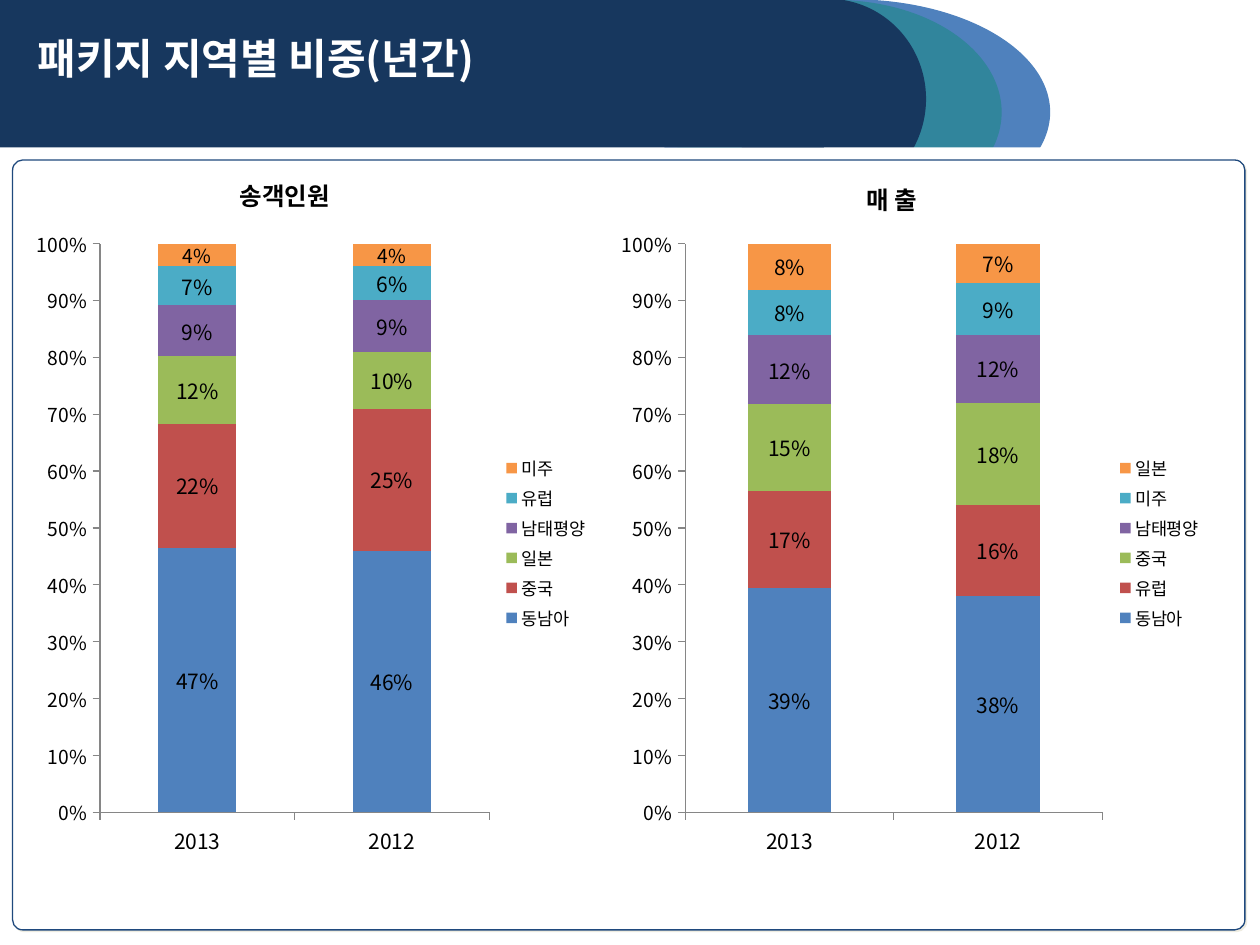
from lxml import etree
from pptx import Presentation
from pptx.chart.data import CategoryChartData
from pptx.dml.color import RGBColor
from pptx.enum.chart import XL_CHART_TYPE, XL_LEGEND_POSITION, XL_TICK_MARK
from pptx.enum.shapes import MSO_SHAPE
from pptx.enum.text import MSO_ANCHOR, PP_ALIGN
from pptx.oxml import parse_xml
from pptx.oxml.ns import nsdecls, qn
from pptx.util import Inches, Pt

ELLIPSE, RECTANGLE, ROUNDED = MSO_SHAPE.OVAL, MSO_SHAPE.RECTANGLE, MSO_SHAPE.ROUNDED_RECTANGLE
LEFT, CENTER = PP_ALIGN.LEFT, PP_ALIGN.CENTER
MIDDLE = MSO_ANCHOR.MIDDLE
STACKED_100 = XL_CHART_TYPE.COLUMN_STACKED_100
LEGEND_RIGHT = XL_LEGEND_POSITION.RIGHT
TICK_OUTSIDE = XL_TICK_MARK.OUTSIDE

BLACK = RGBColor(0x00, 0x00, 0x00)
WHITE = RGBColor(0xFF, 0xFF, 0xFF)
NAVY = RGBColor(0x17, 0x37, 0x5E)
TEAL = RGBColor(0x31, 0x85, 0x9C)
BLUE = RGBColor(0x4F, 0x81, 0xBD)
FRAME_BLUE = RGBColor(0x1F, 0x49, 0x7D)
AXIS_GRAY = RGBColor(0x86, 0x86, 0x86)
SERIES_COLORS = (
    BLUE,
    RGBColor(0xC0, 0x50, 0x4D),
    RGBColor(0x9B, 0xBB, 0x59),
    RGBColor(0x80, 0x64, 0xA2),
    RGBColor(0x4B, 0xAC, 0xC6),
    RGBColor(0xF7, 0x96, 0x46),
)
KOREAN_FONT = "Noto Sans CJK KR"
YEARS = ("2013", "2012")
FRAME_SHADOW = (
    f'<a:outerShdw {nsdecls("a")} dist="17780" dir="2700000" algn="ctr" rotWithShape="0">'
    '<a:srgbClr val="EEECE1"/></a:outerShdw>'
)


class SlideBuilder:
    def __init__(self, slide, font=KOREAN_FONT):
        self.slide = slide
        self.font = font

    def format_font(self, font, size, color=BLACK, bold=False, name=None):
        values = {"name": name or self.font, "size": Pt(size), "bold": bold}
        for attribute, value in values.items():
            setattr(font, attribute, value)
        font.color.rgb = color

    def set_east_asian_font(self, element):
        """Give every run style in the element the Korean typeface too."""
        for latin in list(element.iter(qn("a:latin"))):
            east_asian = etree.Element(qn("a:ea"), typeface=self.font)
            latin.addnext(east_asian)

    def shape(self, kind, box, fill, line=None, line_width=0.75):
        shape = self.slide.shapes.add_shape(kind, *map(Inches, box))
        shape.shadow.inherit = False
        shape.fill.solid()
        shape.fill.fore_color.rgb = fill
        if line is None:
            shape.line.fill.background()
        else:
            shape.line.color.rgb = line
            shape.line.width = Pt(line_width)
        return shape

    def frame(self, box):
        shape = self.shape(ROUNDED, box, WHITE, FRAME_BLUE)
        shape.adjustments[0] = 0.013
        effects = shape._element.spPr.find(qn("a:effectLst"))
        effects.append(parse_xml(FRAME_SHADOW))

    def fill_text(self, shape, text, size, color=BLACK, alignment=LEFT, name=None):
        frame = shape.text_frame
        frame.word_wrap = True
        paragraph = frame.paragraphs[0]
        paragraph.alignment = alignment
        run = paragraph.add_run()
        run.text = text
        self.format_font(run.font, size, color, True, name)
        self.set_east_asian_font(shape._element)

    def text(self, box, text, size, **style):
        shape = self.slide.shapes.add_textbox(*map(Inches, box))
        self.fill_text(shape, text, size, **style)

    def share_chart(self, box, shares, last_label_size):
        data = CategoryChartData(number_format="0%")
        data.categories = YEARS
        for region, values in shares:
            data.add_series(region, values)
        graphic = self.slide.shapes.add_chart(STACKED_100, *map(Inches, box), data)
        chart = graphic.chart
        chart.has_title = False
        self.format_font(chart.font, 18)

        chart.has_legend = True
        chart.legend.position = LEGEND_RIGHT
        chart.legend.include_in_layout = False
        self.format_font(chart.legend.font, 10)

        for axis, size in ((chart.category_axis, 12), (chart.value_axis, 11)):
            axis.has_major_gridlines = False
            axis.major_tick_mark = TICK_OUTSIDE
            axis.format.line.color.rgb = AXIS_GRAY
            self.format_font(axis.tick_labels.font, size)
        chart.value_axis.tick_labels.number_format = "0%"
        chart.value_axis.tick_labels.number_format_is_linked = False

        plot = chart.plots[0]
        for attribute, value in {"gap_width": 150, "overlap": 100, "vary_by_categories": False}.items():
            setattr(plot, attribute, value)
        label_sizes = [12] * (len(shares) - 1) + [last_label_size]
        for series, color, size in zip(plot.series, SERIES_COLORS, label_sizes):
            series.format.fill.solid()
            series.format.fill.fore_color.rgb = color
            series.data_labels.show_value = True
            self.format_font(series.data_labels.font, size)
        self.set_east_asian_font(chart._chartSpace)


def main():
    presentation = Presentation()
    presentation.slide_width, presentation.slide_height = Inches(10), Inches(7.5)
    builder = SlideBuilder(presentation.slides.add_slide(presentation.slide_layouts[6]))

    # Header band with three overlapping curves, cut off by a white strip
    builder.shape(ELLIPSE, (5.2, 0, 3.13, 1.78), BLUE, BLUE)
    builder.shape(ELLIPSE, (5.31, 0, 2.64, 1.78), TEAL)
    builder.shape(ELLIPSE, (5.79, -0.01, 1.56, 1.59), NAVY)
    builder.shape(RECTANGLE, (0, 1.17, 10, 0.93), WHITE)
    builder.shape(RECTANGLE, (0, 0, 6.54, 1.17), NAVY)
    builder.frame((0.1, 1.27, 9.78, 6.11))
    builder.text((0.2, 0.21, 7.01, 0.5), "패키지 지역별 비중(년간)", 24, color=WHITE)

    builder.text((0.35, 1.39, 3.82, 0.34), "송객인원", 14, alignment=CENTER, name="Arial")
    travellers = (
        ("동남아", (0.47, 0.46)),
        ("중국", (0.22, 0.25)),
        ("일본", (0.12, 0.10)),
        ("남태평양", (0.09, 0.09)),
        ("유럽", (0.07, 0.06)),
        ("미주", (0.04, 0.04)),
    )
    builder.share_chart((0.2, 1.72, 4.57, 5.18), travellers, 11)

    sales_heading = builder.shape(RECTANGLE, (5.55, 1.39, 3.06, 0.39), WHITE, WHITE, 2)
    sales_heading.text_frame.vertical_anchor = MIDDLE
    builder.fill_text(sales_heading, "매 출", 14, alignment=CENTER)
    sales = (
        ("동남아", (0.39, 0.38)),
        ("유럽", (0.17, 0.16)),
        ("중국", (0.15, 0.18)),
        ("남태평양", (0.12, 0.12)),
        ("미주", (0.08, 0.09)),
        ("일본", (0.08, 0.07)),
    )
    builder.share_chart((4.84, 1.72, 4.8, 5.18), sales, 12)

    presentation.save("out.pptx")


if __name__ == "__main__":
    main()
